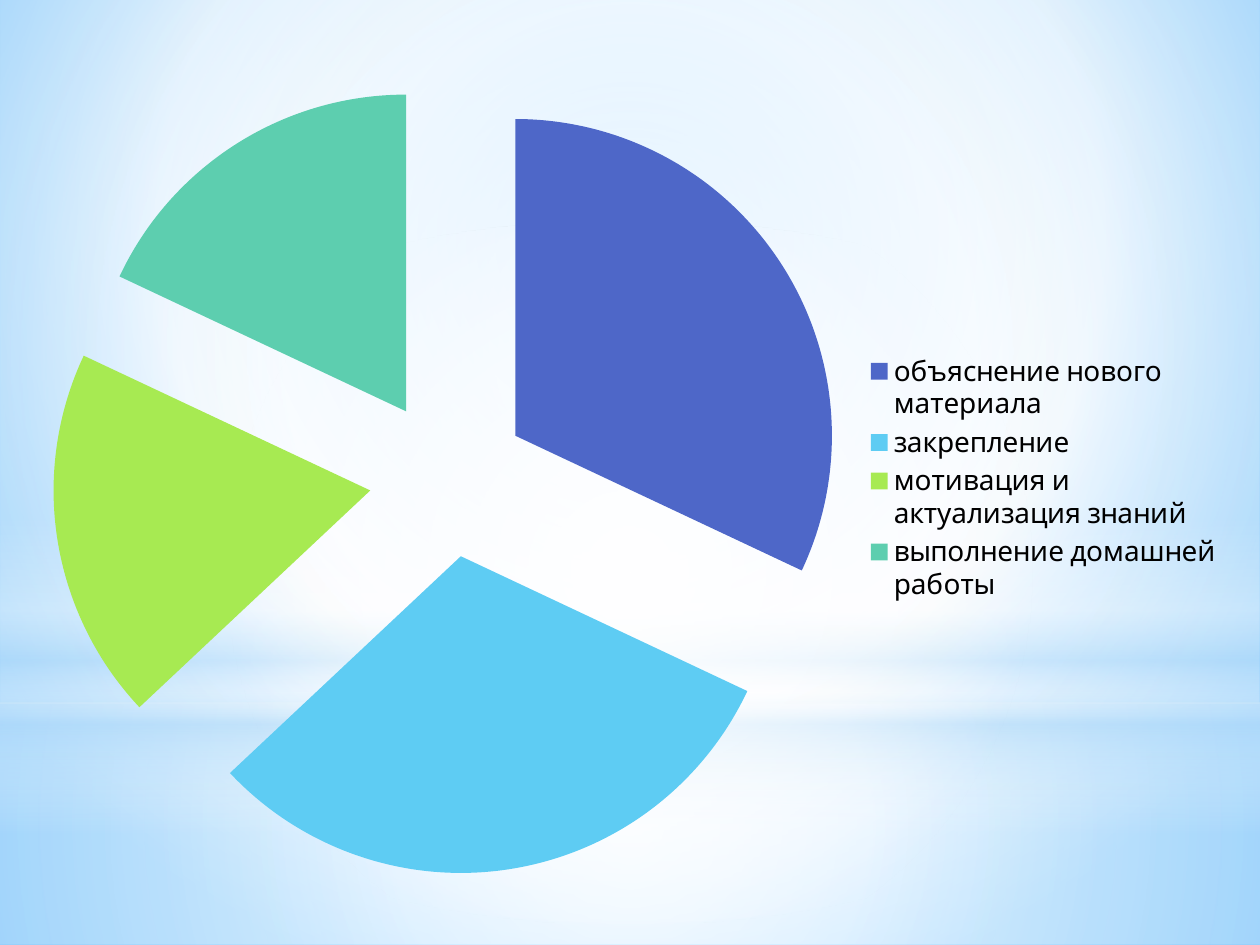
"""Build a slide with an exploded pie chart of lesson stages on a soft blue glow."""
import lxml.etree
import pptx
import pptx.chart.data
import pptx.dml.color
import pptx.enum.chart
import pptx.enum.shapes
import pptx.oxml.ns
import pptx.util

STAGES = [
    ("объяснение нового материала", 32, "4E67C8"),
    ("закрепление", 31, "5ECCF3"),
    ("мотивация и актуализация знаний", 19, "A7EA52"),
    ("выполнение домашней работы", 18, "5DCEAF"),
]
THEME = {"font": "Cabin", "text": "000000", "base_size": 10, "legend_size": 16,
         "white": "FFFFFF", "haze": "B4DCFA", "sky": "9ED5FF", "deep": "5BB9FF"}
CENTER = (50, 50, 50, 50)
BACKDROP = ([(0, "sky", 100), (60, "white", 100), (100, "deep", 100)], (20, 10, 20, 60))
GLOWS = [
    ("RECTANGLE", (0, 5.58, 10, 1.92),
     [(0, "white", 91), (37, "white", 76), (100, "haze", 79)], CENTER),
    ("RECTANGLE", (0, 0, 10, 5.58),
     [(0, "white", 89), (48, "white", 62), (100, "haze", 79)], CENTER),
    ("RECTANGLE", (0, 4.12, 10, 2.5),
     [(0, "white", 0), (29, "white", 30), (45, "haze", 40),
      (55, "white", 26), (65, "haze", 60), (100, "white", 0)], None),
    ("OVAL", (0, 1.75, 10, 5.58), [(0, "white", 100), (56, "white", 0)], CENTER),
]
CHART_BOX = (0.28, 0.29, 9.53, 7.01)
EXPLOSION = 25
qn = pptx.oxml.ns.qn


def color(name):
    return pptx.dml.color.RGBColor.from_string(THEME.get(name, name))


def inches(box):
    return [pptx.util.Inches(length) for length in box]


def set_gradient(fill, holder, stops, focus):
    """Fill the holder element with a radial gradient, or a vertical one without focus."""
    fill.solid()
    solid = holder.find(qn("a:solidFill"))
    gradient = lxml.etree.Element(qn("a:gradFill"), rotWithShape="1")
    stop_list = lxml.etree.SubElement(gradient, qn("a:gsLst"))
    for position, name, opacity in stops:
        stop = lxml.etree.SubElement(stop_list, qn("a:gs"), pos=str(position * 1000))
        tint = lxml.etree.SubElement(stop, qn("a:srgbClr"), val=THEME[name])
        lxml.etree.SubElement(tint, qn("a:alpha"), val=str(opacity * 1000))
    if focus:
        shade = lxml.etree.SubElement(gradient, qn("a:path"), {"path": "circle"})
        sides = {side: str(share * 1000) for side, share in zip("ltrb", focus)}
        lxml.etree.SubElement(shade, qn("a:fillToRect"), sides)
    else:
        lxml.etree.SubElement(gradient, qn("a:lin"), ang="5400000", scaled="0")
    holder.replace(solid, gradient)


def add_backdrop(slide):
    fill = slide.background.fill
    fill.solid()
    set_gradient(fill, next(slide.element.iter(qn("p:bgPr"))), *BACKDROP)
    for kind, box, stops, focus in GLOWS:
        preset = getattr(pptx.enum.shapes.MSO_SHAPE, kind)
        glow = slide.shapes.add_shape(preset, *inches(box))
        glow.shadow.inherit = False
        glow.line.fill.background()
        set_gradient(glow.fill, glow.element.spPr, stops, focus)


def add_pie(slide):
    data = pptx.chart.data.CategoryChartData()
    data.categories = [label for label, _, _ in STAGES]
    data.add_series("Series 1", [value for _, value, _ in STAGES])
    chart = slide.shapes.add_chart(
        pptx.enum.chart.XL_CHART_TYPE.PIE, *inches(CHART_BOX), data).chart
    chart.has_title = False
    chart.has_legend = True
    chart.legend.position = pptx.enum.chart.XL_LEGEND_POSITION.RIGHT
    chart.legend.include_in_layout = False
    for font, size in ((chart.font, "base_size"), (chart.legend.font, "legend_size")):
        font.name = THEME["font"]
        font.size = pptx.util.Pt(THEME[size])
        font.color.rgb = color("text")
    plot = chart.plots[0]
    plot.vary_by_categories = True
    series = plot.series[0]
    for index, (_, _, shade) in enumerate(STAGES):
        fill = series.points[index].format.fill
        fill.solid()
        fill.fore_color.rgb = color(shade)
    explosion = lxml.etree.Element(qn("c:explosion"), val=str(EXPLOSION))
    series._element.find(qn("c:dPt")).addprevious(explosion)


def main():
    deck = pptx.Presentation()
    deck.slide_width, deck.slide_height = inches((10, 7.5))
    slide = deck.slides.add_slide(deck.slide_layouts[6])
    add_backdrop(slide)
    add_pie(slide)
    deck.save("out.pptx")


if __name__ == "__main__":
    main()
